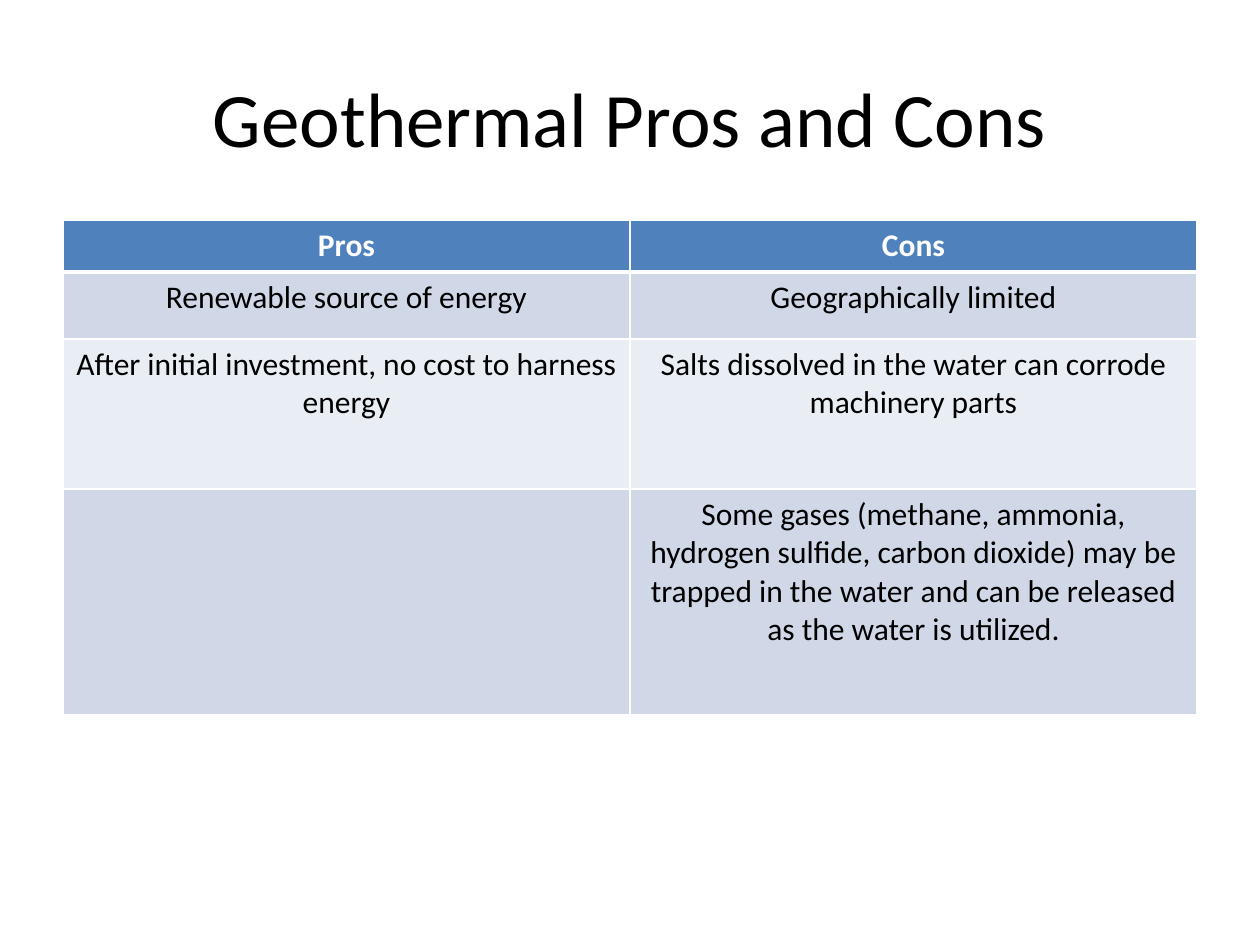
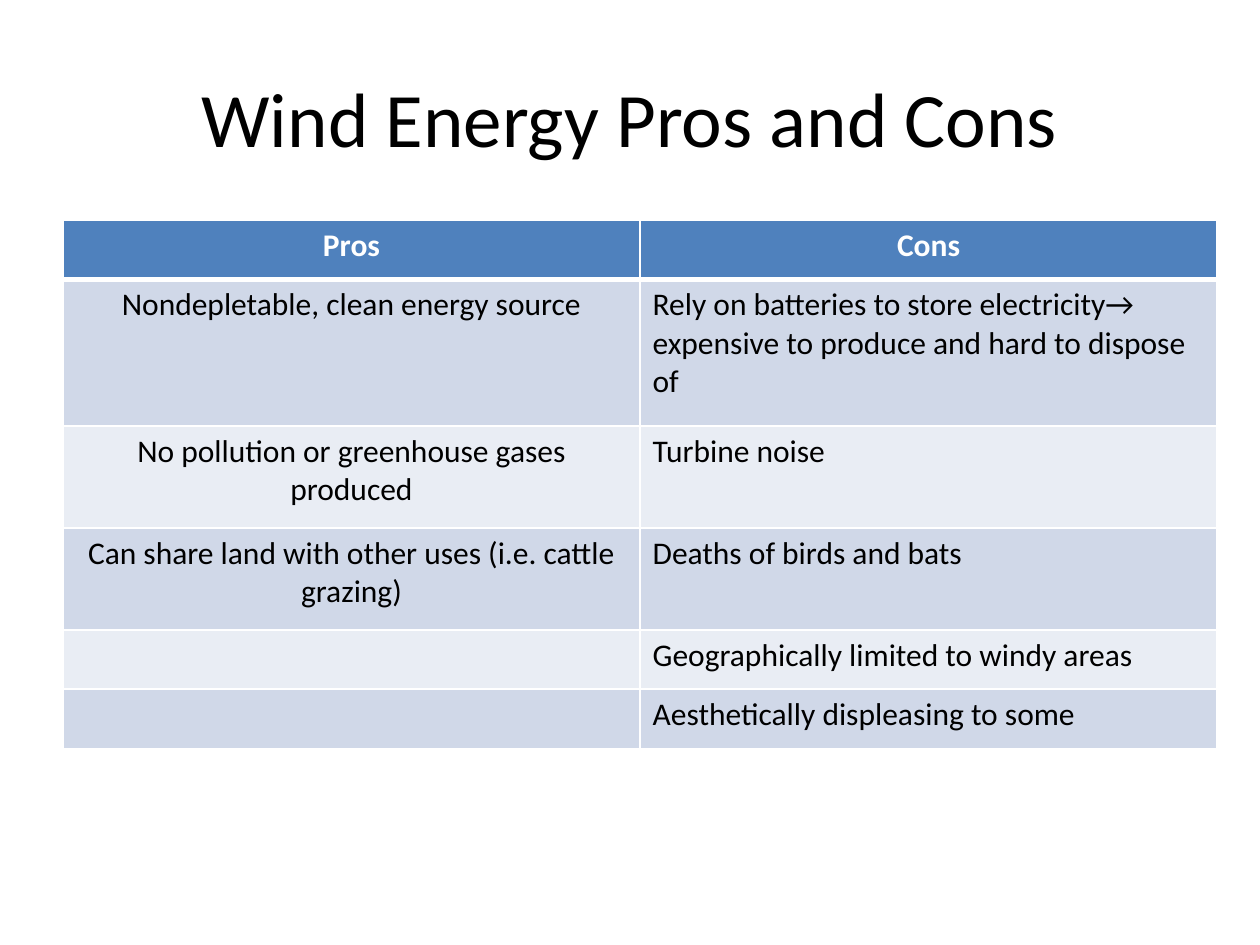
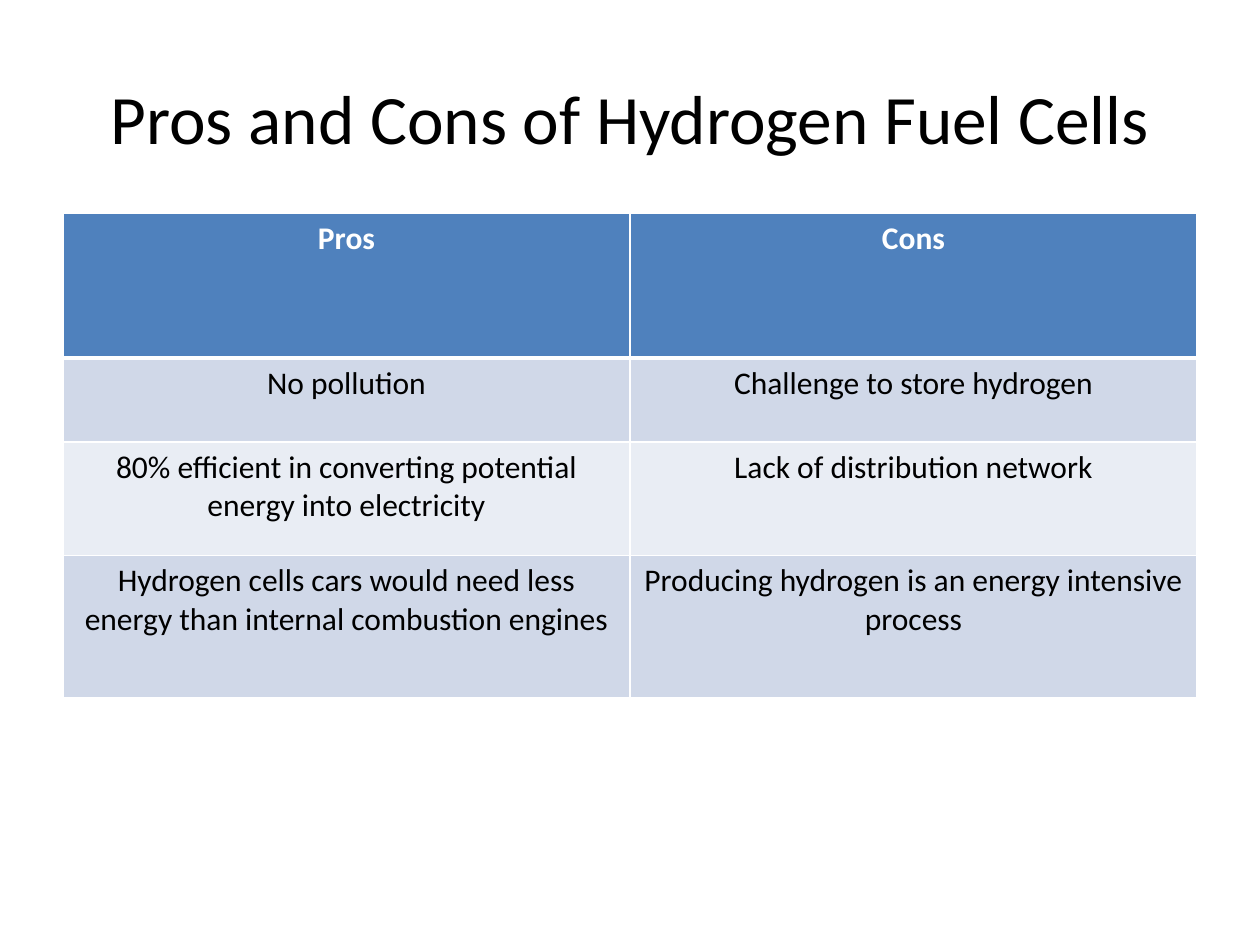
"""Build three slides of tables comparing the pros and cons of energy sources."""
from dataclasses import dataclass

from lxml.etree import SubElement
from pptx import Presentation
from pptx.dml.color import RGBColor as RGB
from pptx.enum.text import MSO_ANCHOR as Anchor, PP_ALIGN as Align
from pptx.oxml.ns import qn
from pptx.util import Inches, Pt


@dataclass(frozen=True)
class Theme:
    font: str = "Calibri"
    ink: str = "000000"
    rule: str = "FFFFFF"
    header: str = "4F81BD"
    header_ink: str = "FFFFFF"
    bands: tuple = ("E9EDF4", "D0D8E8")
    title_size: float = 44
    long_title_size: float = 39.6
    cell_size: float = 18
    thin: float = 1
    thick: float = 3


THEME = Theme()


def style_text(paragraph, size, color, align, bold=False):
    paragraph.alignment = align
    paragraph.font.name = THEME.font
    paragraph.font.size = Pt(size)
    paragraph.font.bold = bold
    paragraph.font.color.rgb = RGB.from_string(color)


def add_border(cell, side, width):
    line = SubElement(cell._tc.get_or_add_tcPr(), qn(f"a:ln{side}"), w=str(Pt(width)))
    SubElement(SubElement(line, qn("a:solidFill")), qn("a:srgbClr"), val=THEME.rule)


comparisons = [
    dict(
        title="Geothermal Pros and Cons",
        title_size=THEME.title_size,
        top=1.75,
        column_width=4.5,
        cons_align=Align.CENTER,
        heights=[0.41, 0.53, 1.19, 1.79],
        rows=[
            ("Renewable source of energy", "Geographically limited"),
            ("After initial investment, no cost to harness energy",
             "Salts dissolved in the water can corrode machinery parts"),
            ("", "Some gases (methane, ammonia, hydrogen sulfide, carbon dioxide) may be "
                 "trapped in the water and can be released as the water is utilized."),
        ],
    ),
    dict(
        title="Wind Energy Pros and Cons",
        title_size=THEME.title_size,
        top=1.75,
        column_width=4.58,
        cons_align=Align.LEFT,
        heights=[0.47, 1.16, 0.81, 0.81, 0.47, 0.47],
        rows=[
            ("Nondepletable, clean energy source",
             "Rely on batteries to store electricity→ expensive to produce and hard to dispose of"),
            ("No pollution or greenhouse gases produced", "Turbine noise"),
            ("Can share land with other uses (i.e. cattle grazing)", "Deaths of birds and bats"),
            ("", "Geographically limited to windy areas"),
            ("", "Aesthetically displeasing to some"),
        ],
    ),
    dict(
        title="Pros and Cons of Hydrogen Fuel Cells",
        title_size=THEME.long_title_size,
        top=1.69,
        column_width=4.5,
        cons_align=Align.CENTER,
        heights=[1.15, 0.67, 0.9, 1.13],
        rows=[
            ("No pollution", "Challenge to store hydrogen"),
            ("80% efficient in converting potential energy into electricity",
             "Lack of distribution network"),
            ("Hydrogen cells cars would need less energy than internal combustion engines",
             "Producing hydrogen is an energy intensive process"),
        ],
    ),
]

deck = Presentation()
deck.slide_width, deck.slide_height = Inches(10), Inches(7.5)
title_only = deck.slide_layouts[5]

for topic in comparisons:
    slide = deck.slides.add_slide(title_only)
    heading = slide.shapes.title
    heading.left, heading.top = Inches(0.5), Inches(0.3)
    heading.width, heading.height = Inches(9), Inches(1.25)
    heading.text_frame.text = topic["title"]
    heading.text_frame.vertical_anchor = Anchor.MIDDLE
    style_text(heading.text_frame.paragraphs[0], topic["title_size"], THEME.ink, Align.CENTER)

    rows = [("Pros", "Cons"), *topic["rows"]]
    heights = topic["heights"]
    table = slide.shapes.add_table(
        len(rows), 2, Inches(0.5), Inches(topic["top"]),
        Inches(2 * topic["column_width"]), Inches(sum(heights)),
    ).table
    for column in table.columns:
        column.width = Inches(topic["column_width"])

    for r, (entries, height) in enumerate(zip(rows, heights)):
        table.rows[r].height = Inches(height)
        is_header = r == 0
        fill = THEME.header if is_header else THEME.bands[r % 2]
        ink = THEME.header_ink if is_header else THEME.ink
        top_rule = THEME.thick if r == 1 else THEME.thin
        bottom_rule = THEME.thick if is_header else THEME.thin
        for c, entry in enumerate(entries):
            cell = table.cell(r, c)
            for side, width in zip("LRTB", (THEME.thin, THEME.thin, top_rule, bottom_rule)):
                add_border(cell, side, width)
            cell.fill.solid()
            cell.fill.fore_color.rgb = RGB.from_string(fill)
            cell.text = entry
            align = topic["cons_align"] if c == 1 and not is_header else Align.CENTER
            style_text(cell.text_frame.paragraphs[0], THEME.cell_size, ink, align, is_header)

deck.save("out.pptx")
